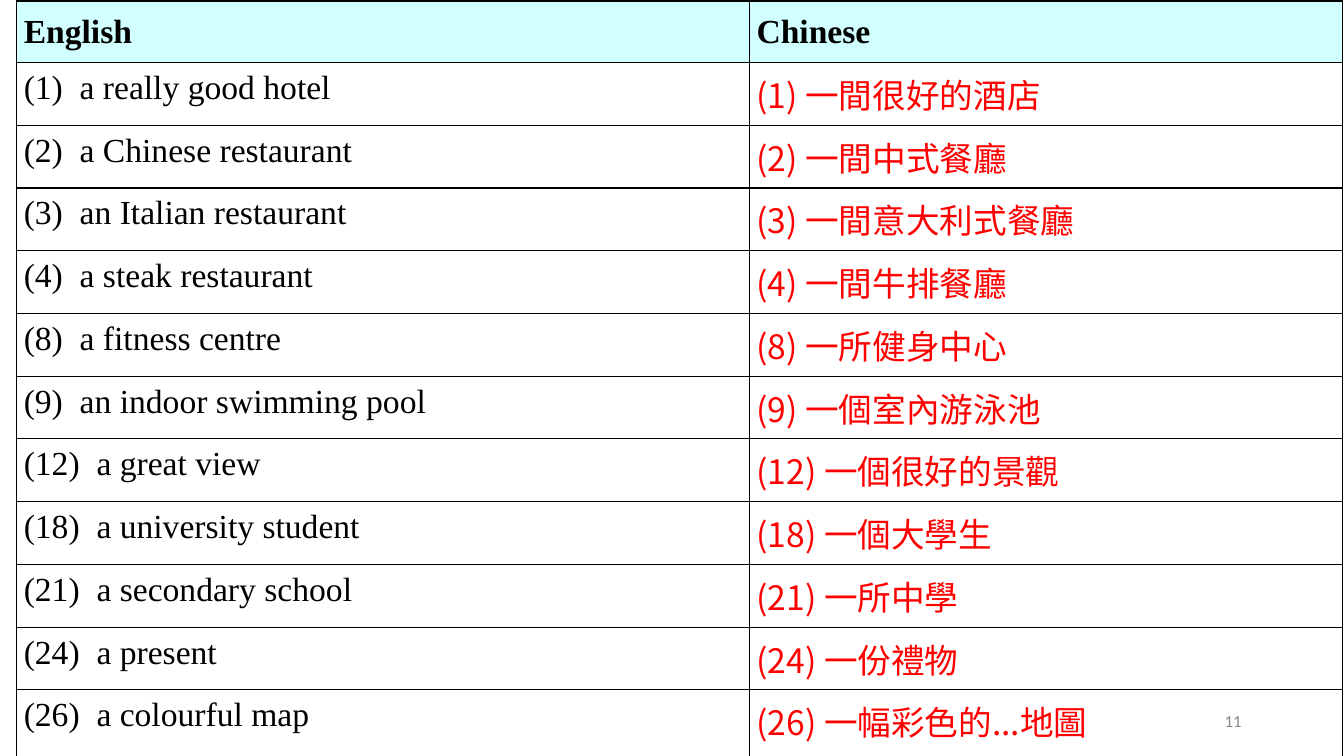
from lxml import etree
from pptx import Presentation
from pptx.dml.color import RGBColor
from pptx.enum.text import MSO_ANCHOR, PP_ALIGN
from pptx.oxml import parse_xml
from pptx.oxml.ns import nsdecls, qn
from pptx.util import Pt

BLACK = RGBColor(0x00, 0x00, 0x00)
RED = RGBColor(0xFF, 0x00, 0x00)
CYAN = RGBColor(0xD1, 0xFF, 0xFF)
GREY = RGBColor(0x88, 0x88, 0x88)
JUSTIFY, RIGHT = PP_ALIGN.JUSTIFY, PP_ALIGN.RIGHT
MIDDLE = MSO_ANCHOR.MIDDLE
SERIF, HAN = "Times New Roman", "Noto Sans CJK SC"

HEADS = ("English", "Chinese")
TERMS = [
    (1, "a really good hotel", "一間很好的酒店"),
    (2, "a Chinese restaurant", "一間中式餐廳"),
    (3, "an Italian restaurant", "一間意大利式餐廳"),
    (4, "a steak restaurant", "一間牛排餐廳"),
    (8, "a fitness centre", "一所健身中心"),
    (9, "an indoor swimming pool", "一個室內游泳池"),
    (12, "a great view", "一個很好的景觀"),
    (18, "a university student", "一個大學生"),
    (21, "a secondary school", "一所中學"),
    (24, "a present", "一份禮物"),
    (26, "a colourful map", "一幅彩色的...地圖"),
]
WIDTHS = (523.4, 423.4)
HEIGHTS = [43.9] + [40.3] * 2 + [43.2] + [40.3] * 7 + [63.4]


def style(par, face, size, color, bold=False):
    font = par.font
    font.name, font.size, font.bold = face, Pt(size), bold
    font.color.rgb = color


def fill_cell(cell, text, face, color, head):
    cell.margin_left = cell.margin_right = Pt(5)
    cell.margin_top = cell.margin_bottom = Pt(5)
    props = cell._tc.get_or_add_tcPr()
    for side in ("lnL", "lnR", "lnT", "lnB"):
        props.append(parse_xml(
            f'<a:{side} {nsdecls("a")} w="{Pt(1)}"><a:solidFill>'
            f'<a:srgbClr val="{BLACK}"/></a:solidFill></a:{side}>'))
    if head:
        cell.fill.solid()
        cell.fill.fore_color.rgb = CYAN
    else:
        cell.fill.background()
    par = cell.text_frame.paragraphs[0]
    par.text = text
    par.alignment = JUSTIFY
    if head:
        par.line_spacing = 1.15
    style(par, face, 24, color, head)
    # East Asian face for the Chinese glyphs
    if face == HAN:
        props = par.font._element
        etree.SubElement(props, qn("a:ea"), typeface=HAN)


deck = Presentation()
deck.slide_width, deck.slide_height = Pt(960), Pt(540)
slide = deck.slides.add_slide(deck.slide_layouts[6])

# Vocabulary table
frame = slide.shapes.add_table(len(HEIGHTS), len(WIDTHS), Pt(12), Pt(0.7),
                               Pt(sum(WIDTHS)), Pt(sum(HEIGHTS)))
table = frame.table
table.first_row = table.horz_banding = False
for col, width in zip(table.columns, WIDTHS):
    col.width = Pt(width)
for row, height in zip(table.rows, HEIGHTS):
    row.height = Pt(height)

# Heading row
for col, head in enumerate(HEADS):
    fill_cell(table.cell(0, col), head, SERIF, BLACK, True)

# Terms and their translations
for row, (num, term, han) in enumerate(TERMS, 1):
    fill_cell(table.cell(row, 0), f"({num})  {term}", SERIF, BLACK, False)
    fill_cell(table.cell(row, 1), f"({num}) {han}", HAN, RED, False)

# Page number
box = slide.shapes.add_textbox(Pt(678), Pt(500.5), Pt(216), Pt(28.8))
text = box.text_frame
text.word_wrap = True
text.vertical_anchor = MIDDLE
par = text.paragraphs[0]
par.text = "11"
par.alignment = RIGHT
style(par, "Calibri", 12, GREY)

deck.save("out.pptx")
